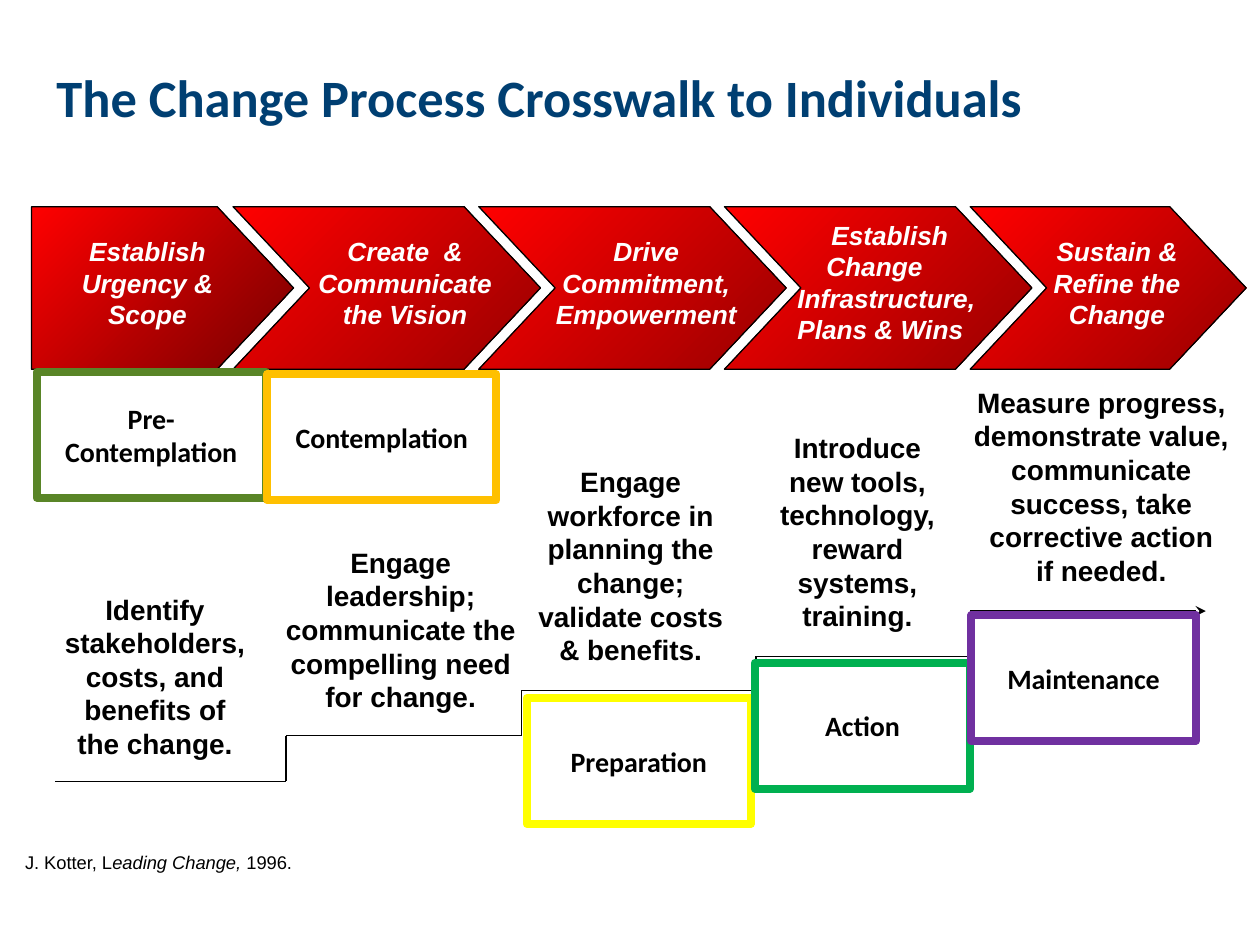
from dataclasses import dataclass
from itertools import pairwise

from lxml.etree import SubElement
from pptx import Presentation
from pptx.dml.color import RGBColor
from pptx.enum.shapes import MSO_CONNECTOR, MSO_SHAPE
from pptx.enum.text import MSO_ANCHOR, PP_ALIGN
from pptx.oxml.ns import qn
from pptx.util import Inches, Pt


@dataclass(frozen=True)
class Theme:
    heading_font: str = "Calibri"
    body_font: str = "Arial"
    title: str = "003F72"
    ink: str = "000000"
    paper: str = "FFFFFF"
    bright: str = "FF0000"
    dark: str = "990000"
    darkest: str = "760000"
    title_size: float = 30
    text_size: float = 16
    arrow_size: float = 15
    source_size: float = 10.5
    thin: float = 0.75
    frame: float = 4.5


@dataclass(frozen=True)
class Box:
    left: float
    top: float
    width: float
    height: float

    def lengths(self):
        return [Inches(n) for n in (self.left, self.top, self.width, self.height)]


@dataclass(frozen=True)
class Line:
    """One paragraph of an arrow label, with its left margin."""
    text: str
    margin: float = 0


@dataclass(frozen=True)
class Arrow:
    box: Box
    label_box: Box
    lines: tuple[Line, ...]
    align: PP_ALIGN = PP_ALIGN.CENTER
    preset: MSO_SHAPE = MSO_SHAPE.CHEVRON
    end_color: str = Theme.dark


@dataclass(frozen=True)
class Step:
    """A tread of the staircase and the text standing on it."""
    start: float
    level: float
    text_left: float
    text_width: float
    text_height: float
    text: str


@dataclass(frozen=True)
class Phase:
    name: str
    box: Box
    color: str


THEME = Theme()
ARROW_TOP, ARROW_HEIGHT, ARROW_PITCH = 1.64, 1.29, 1.95
LABEL_TOP, LABEL_HEIGHT = 1.82, 0.92
STAIRS_END = 9.57


def chevron_box(index: int, width: float = 2.44) -> Box:
    return Box(1.85 + ARROW_PITCH * index, ARROW_TOP, width, ARROW_HEIGHT)


def label_box(left: float, width: float) -> Box:
    return Box(left, LABEL_TOP, width, LABEL_HEIGHT)


ARROWS = (
    Arrow(Box(0.25, ARROW_TOP, 2.08, ARROW_HEIGHT), label_box(0.51, 1.32),
          (Line("Establish Urgency & Scope"),),
          preset=MSO_SHAPE.PENTAGON, end_color=THEME.darkest),
    Arrow(chevron_box(0), label_box(2.07, 2.04),
          (Line("Create  & Communicate the Vision", 0.25),)),
    Arrow(chevron_box(1), label_box(4.2, 1.86),
          (Line("Drive\nCommitment,\nEmpowerment"),)),
    Arrow(chevron_box(2), Box(5.98, 1.69, 2.04, 1.19),
          (Line("Establish", 0.52), Line("Change", 0.48),
           Line("Infrastructure, Plans & Wins", 0.25)), PP_ALIGN.LEFT),
    Arrow(chevron_box(3, 2.19), label_box(8.09, 1.55),
          (Line("Sustain & Refine the\nChange"),)),
)
STEPS = (
    Step(0.44, 6.2, 0.38, 1.7, 1.55,
         "Identify\nstakeholders,\ncosts, and benefits of the change."),
    Step(2.27, 5.84, 2.17, 2.02, 1.56,
         "Engage leadership; communicate the compelling need for change."),
    Step(4.14, 5.48, 4.11, 1.79, 1.84,
         "Engage workforce in planning the change; validate costs & benefits."),
    Step(6, 5.21, 6, 1.61, 1.84,
         "Introduce new tools, technology, reward systems, training."),
    Step(7.7, 4.85, 7.55, 2.38, 1.84,
         "Measure progress, demonstrate value, communicate success, "
         "take corrective action\nif needed."),
)
PHASES = (
    Phase("Pre-Contemplation", Box(0.29, 2.95, 1.82, 1), "598527"),
    Phase("Contemplation", Box(2.12, 2.97, 1.82, 1), "FFC000"),
    Phase("Preparation", Box(4.18, 5.54, 1.78, 1), "FFFF00"),
    Phase("Action", Box(5.99, 5.26, 1.71, 1), "00B050"),
    Phase("Maintenance", Box(7.71, 4.88, 1.78, 1), "7030A0"),
)


def format_font(font, size: float, color: str, name: str = THEME.body_font,
                bold: bool = True, italic: bool = False) -> None:
    values = {"size": Pt(size), "name": name, "bold": bold, "italic": italic}
    for key, value in values.items():
        setattr(font, key, value)
    font.color.rgb = RGBColor.from_string(color)


def format_outline(line, color: str, width: float) -> None:
    line.color.rgb = RGBColor.from_string(color)
    line.width = Pt(width)


def add_frame(page, box: Box, wrap: bool = True):
    frame = page.shapes.add_textbox(*box.lengths()).text_frame
    frame.word_wrap = wrap
    return frame


def add_title(page) -> None:
    frame = add_frame(page, Box(0.35, 0.37, 7.97, 0.85))
    frame.vertical_anchor = MSO_ANCHOR.MIDDLE
    para = frame.paragraphs[0]
    para.text = "The Change Process Crosswalk to Individuals"
    para.line_spacing = 0.9
    format_font(para.font, THEME.title_size, THEME.title, THEME.heading_font)


def add_step_text(page, step: Step) -> None:
    box = Box(step.text_left, step.level - step.text_height,
              step.text_width, step.text_height)
    para = add_frame(page, box).paragraphs[0]
    para.text = step.text
    para.alignment = PP_ALIGN.CENTER
    format_font(para.font, THEME.text_size, THEME.ink)


def add_stairs(page) -> None:
    """Draw treads and risers, with an arrowhead on the last tread."""
    ends = [step.start for step in STEPS[1:]] + [STAIRS_END]
    points = [(x, step.level) for step, end in zip(STEPS, ends)
              for x in (step.start, end)]
    for start, end in pairwise(points):
        edge = page.shapes.add_connector(
            MSO_CONNECTOR.STRAIGHT, *(Inches(n) for n in start + end))
        format_outline(edge.line, THEME.ink, THEME.thin)
        SubElement(edge._element.spPr, qn("a:effectLst"))
    SubElement(edge.line._get_or_add_ln(), qn("a:tailEnd"), type="stealth")


def add_arrow(page, arrow: Arrow) -> None:
    shape = page.shapes.add_shape(arrow.preset, *arrow.box.lengths())
    shape.shadow.inherit = False
    shape.adjustments[0] = 0.47
    shape.fill.gradient()
    shape.fill.gradient_angle = 315
    for stop, color in zip(shape.fill.gradient_stops, (THEME.bright, arrow.end_color)):
        stop.color.rgb = RGBColor.from_string(color)
    format_outline(shape.line, THEME.ink, THEME.thin)


def add_arrow_label(page, arrow: Arrow) -> None:
    frame = add_frame(page, arrow.label_box)
    for index, line in enumerate(arrow.lines):
        para = frame.add_paragraph() if index else frame.paragraphs[0]
        para.text = line.text
        para.alignment = arrow.align
        para.line_spacing = Pt(18)
        para._p.get_or_add_pPr().set("marL", str(Inches(line.margin)))
        format_font(para.font, THEME.arrow_size, THEME.paper, italic=True)


def add_source(page) -> None:
    para = add_frame(page, Box(0.1, 6.71, 2.45, 0.28), wrap=False).paragraphs[0]
    for text, italic in (("J. Kotter, L", False), ("eading Change,", True), (" 1996.", False)):
        span = para.add_run()
        span.text = text
        format_font(span.font, THEME.source_size, THEME.ink, bold=False, italic=italic)


def add_phase(page, phase: Phase) -> None:
    shape = page.shapes.add_shape(MSO_SHAPE.RECTANGLE, *phase.box.lengths())
    shape.shadow.inherit = False
    shape.fill.solid()
    shape.fill.fore_color.rgb = RGBColor.from_string(THEME.paper)
    format_outline(shape.line, phase.color, THEME.frame)
    frame = shape.text_frame
    frame.word_wrap = True
    frame.vertical_anchor = MSO_ANCHOR.MIDDLE
    para = frame.paragraphs[0]
    para.text = phase.name
    para.alignment = PP_ALIGN.CENTER
    format_font(para.font, THEME.text_size, THEME.ink, THEME.heading_font)


def main() -> None:
    deck = Presentation()
    deck.slide_width, deck.slide_height = Inches(10), Inches(7.5)
    page = deck.slides.add_slide(deck.slide_layouts[6])
    add_title(page)
    for step in STEPS:
        add_step_text(page, step)
    add_stairs(page)
    for draw in (add_arrow, add_arrow_label):
        for arrow in ARROWS:
            draw(page, arrow)
    add_source(page)
    for phase in PHASES:
        add_phase(page, phase)
    deck.save("out.pptx")


if __name__ == "__main__":
    main()
